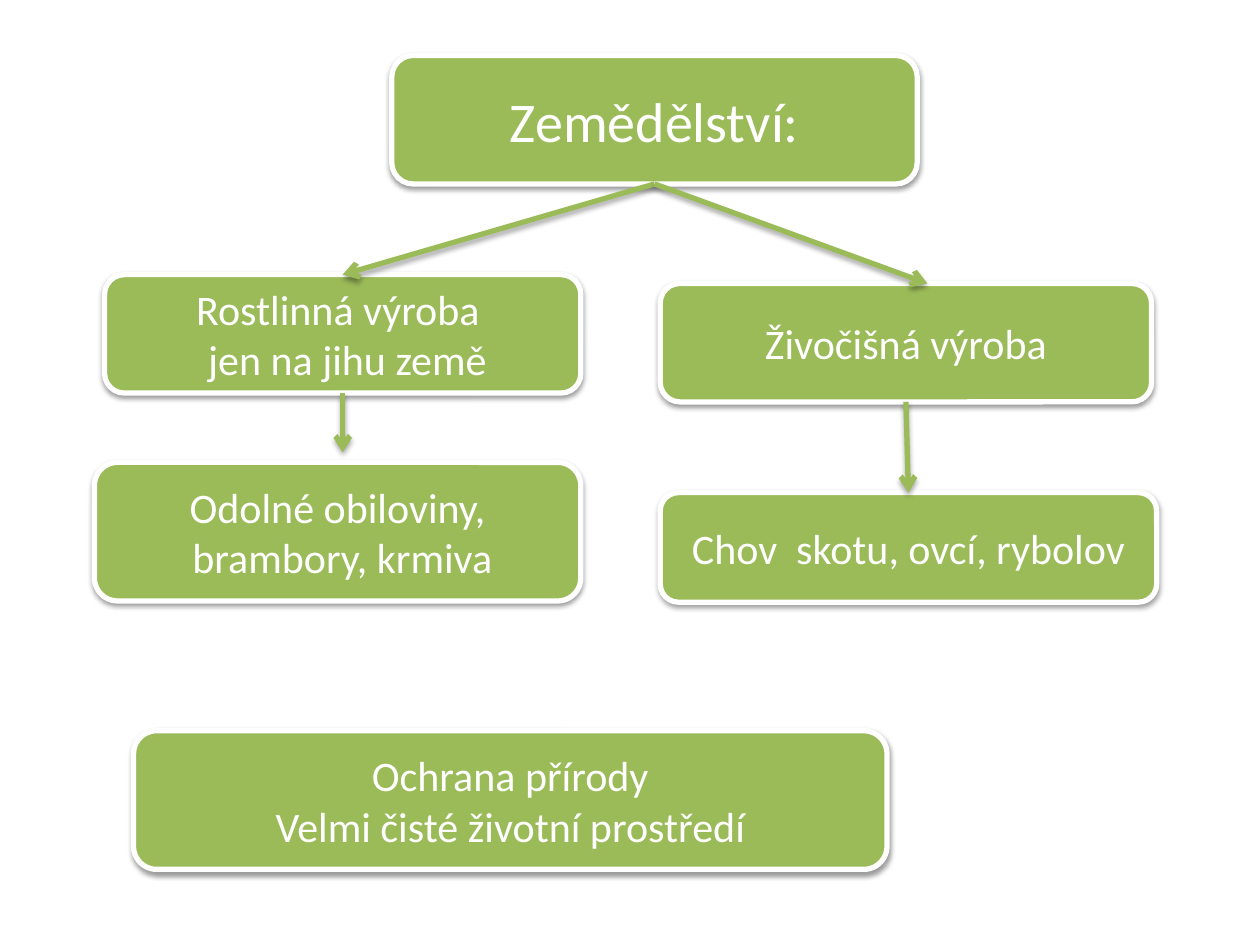
from lxml.etree import SubElement
from pptx import Presentation
from pptx.dml.color import RGBColor
from pptx.enum.shapes import MSO_CONNECTOR, MSO_SHAPE
from pptx.enum.text import MSO_ANCHOR, PP_ALIGN
from pptx.oxml.ns import qn
from pptx.util import Inches, Pt

GREEN = RGBColor(0x9B, 0xBB, 0x59)
WHITE = RGBColor(0xFF, 0xFF, 0xFF)
TOP, BOTTOM = 0, 2
BLANK_LAYOUT = 6

BOXES = {
    "animal": (5.24, 2.25, 3.9, 0.94, 24, ["Živočišná výroba"]),
    "crops": (0.75, 3.67, 3.86, 1.1, 24, ["Odolné obiloviny,", " brambory, krmiva"]),
    "farming": (3.11, 0.44, 4.17, 1.02, 32, ["Zemědělství:"]),
    "plant": (0.83, 2.18, 3.78, 0.94, 24, ["Rostlinná výroba ", " jen na jihu země"]),
    "livestock": (5.24, 3.91, 3.94, 0.87, 24, ["Chov  skotu, ovcí, rybolov"]),
    "nature": (1.06, 5.8, 5.98, 1.1, 24, ["Ochrana přírody", "Velmi čisté životní prostředí"]),
}

ARROWS = [
    ("farming", "plant", None),
    ("farming", None, (7.36, 2.25)),
    ("plant", None, (2.72, 3.59)),
    ("animal", "livestock", None),
]


def set_attributes(target, values):
    for name, value in values.items():
        setattr(target, name, value)


def add_shadow(properties, distance, opacity):
    effects = properties.find(qn("a:effectLst"))
    if effects is None:
        effects = SubElement(properties, qn("a:effectLst"))
    shadow = SubElement(effects, qn("a:outerShdw"), {
        "blurRad": str(Pt(3.1)),
        "dist": str(Pt(distance)),
        "dir": "5400000",
        "rotWithShape": "0",
    })
    color = SubElement(shadow, qn("a:srgbClr"), val="000000")
    SubElement(color, qn("a:alpha"), val=str(opacity * 1000))


def add_box(slide, left, top, width, height, size, lines):
    shape = slide.shapes.add_shape(
        MSO_SHAPE.ROUNDED_RECTANGLE,
        Inches(left), Inches(top), Inches(width), Inches(height),
    )
    shape.fill.solid()
    shape.fill.fore_color.rgb = GREEN
    shape.line.color.rgb = WHITE
    shape.line.width = Pt(3)
    shape.shadow.inherit = False
    add_shadow(shape._element.spPr, 1.6, 38)
    frame = shape.text_frame
    set_attributes(frame, {"word_wrap": True, "vertical_anchor": MSO_ANCHOR.MIDDLE})
    for index, text in enumerate(lines):
        paragraph = frame.add_paragraph() if index else frame.paragraphs[0]
        set_attributes(paragraph, {"text": text, "alignment": PP_ALIGN.CENTER})
        font = paragraph.runs[0].font
        set_attributes(font, {"name": "Calibri", "size": Pt(size)})
        font.color.rgb = WHITE
    return shape


def add_arrow(slide, source, target, end):
    end_x, end_y = (Inches(value) for value in end or (0, 0))
    connector = slide.shapes.add_connector(MSO_CONNECTOR.STRAIGHT, 0, 0, end_x, end_y)
    connector.begin_connect(source, BOTTOM)
    if target is not None:
        connector.end_connect(target, TOP)
    connector.line.color.rgb = GREEN
    connector.line.width = Pt(3)
    properties = connector._element.spPr
    SubElement(properties.find(qn("a:ln")), qn("a:tailEnd"), type="arrow")
    add_shadow(properties, 1.8, 35)


def main():
    presentation = Presentation()
    set_attributes(presentation, {"slide_width": Inches(10), "slide_height": Inches(7.5)})
    slide = presentation.slides.add_slide(presentation.slide_layouts[BLANK_LAYOUT])
    boxes = {name: add_box(slide, *values) for name, values in BOXES.items()}
    for source, target, end in ARROWS:
        add_arrow(slide, boxes[source], boxes.get(target), end)
    presentation.save("out.pptx")


if __name__ == "__main__":
    main()
